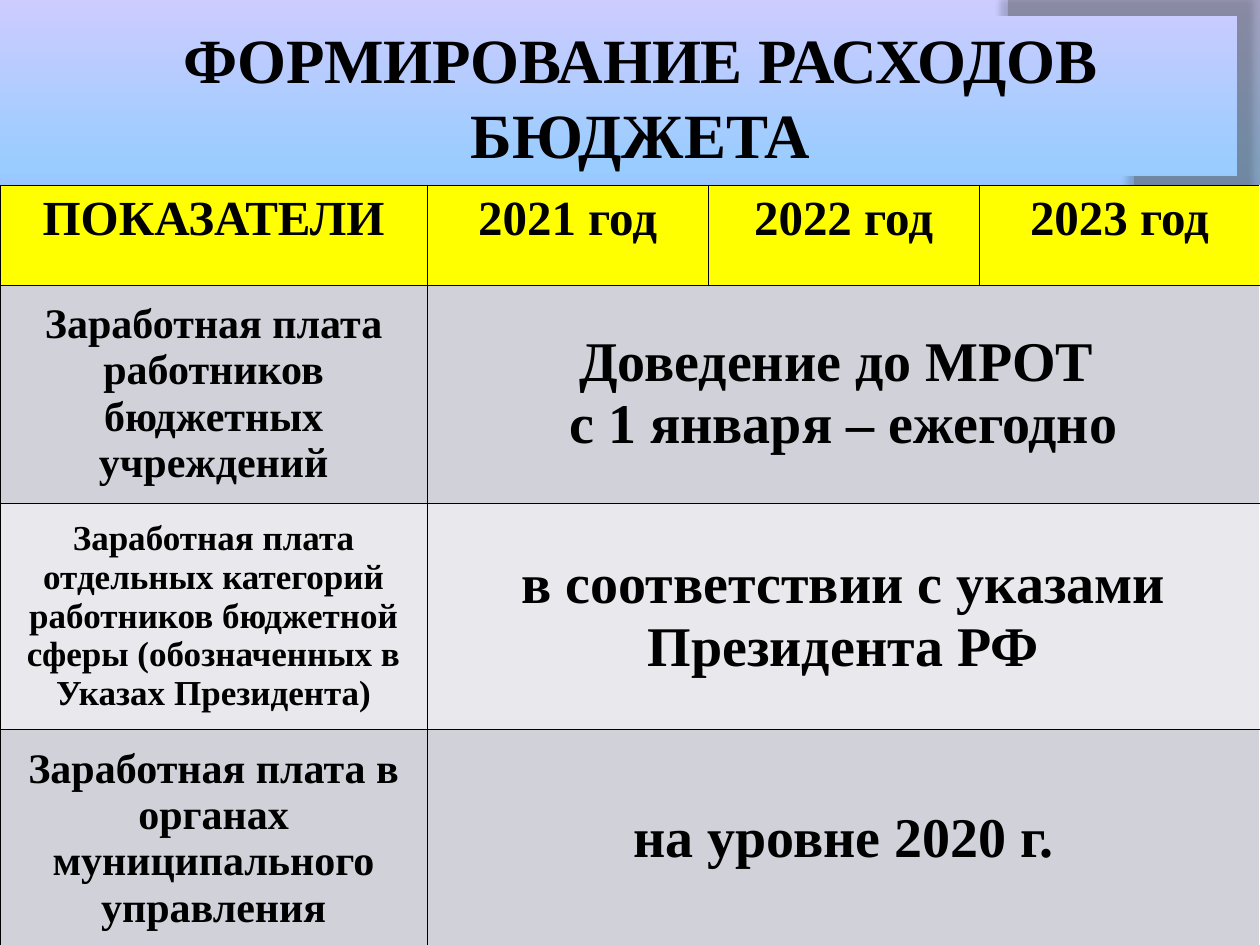
import pptx
import pptx.dml.color
import pptx.enum.text
import pptx.oxml
import pptx.oxml.ns
import pptx.util
from pptx.util import Inches

FONT = "Times New Roman"
BLACK = "000000"
WHITE = "FFFFFF"
YELLOW = "FFFF00"
BAND_DARK = "D1D1DA"
BAND_LIGHT = "E9E9ED"
SKY_STOPS = [(0, "CCCCFF"), (18, "99CCFF"), (36, "9966FF"),
             (61, "CC99FF"), (82, "99CCFF"), (100, "CCCCFF")]
YEARS = ["2021 год", "2022 год", "2023 год"]
INDICATORS = [
    ("Заработная плата работников бюджетных учреждений", 24,
     ["Доведение до МРОТ ", "с 1 января – ежегодно"]),
    ("Заработная плата отдельных категорий работников бюджетной сферы "
     "(обозначенных в Указах Президента)", 20,
     ["в соответствии с указами Президента РФ"]),
    ("Заработная плата в органах муниципального управления", 24,
     ["на уровне 2020 г."]),
]


def rgb(hex_colour):
    return pptx.dml.color.RGBColor.from_string(hex_colour)


def xml(markup):
    head, rest = markup.split(">", 1)
    slash = "/" if head.endswith("/") else ""
    return pptx.oxml.parse_xml(
        f"{head.rstrip('/')} {pptx.oxml.ns.nsdecls('a')}{slash}>{rest}")


def write(frame, lines, size):
    for index, line in enumerate(lines):
        paragraph = frame.paragraphs[0] if index == 0 else frame.add_paragraph()
        paragraph.alignment = pptx.enum.text.PP_ALIGN.CENTER
        run = paragraph.add_run()
        run.text = line
        run.font.name = FONT
        run.font.size = pptx.util.Pt(size)
        run.font.bold = True
        run.font.color.rgb = rgb(BLACK)


def paint_sky(slide):
    fill = slide.background.fill
    fill.gradient()
    fill.gradient_angle = 270
    stops = slide.element.find(".//" + pptx.oxml.ns.qn("a:gsLst"))
    for stop in list(stops):
        stops.remove(stop)
    for position, colour in SKY_STOPS:
        stops.append(xml(f'<a:gs pos="{position * 1000}">'
                         f'<a:srgbClr val="{colour}"/></a:gs>'))


def bezier(start, first, second, end, steps=40):
    for step in range(1, steps + 1):
        t = step / steps
        weights = ((1 - t) ** 3, 3 * t * (1 - t) ** 2, 3 * t ** 2 * (1 - t), t ** 3)
        yield tuple(sum(w * point[axis] for w, point
                        in zip(weights, (start, first, second, end)))
                    for axis in (0, 1))


def add_wing(slide, left, top, width, height):
    right, bottom = left + width, top + height
    foot = (left + 0.21, bottom)
    curve = bezier(foot, (left + 1.35, top + 6.19), (left + 2.18, top + 3), (left, top))
    builder = slide.shapes.build_freeform(right, top + 0.02, scale=Inches(1))
    builder.add_line_segments([(right, bottom), foot, *curve], close=True)
    wing = builder.convert_to_shape()
    wing.fill.solid()
    wing.fill.fore_color.rgb = rgb("5E5E5E")
    wing.line.fill.background()
    properties = wing.element.spPr
    colour = properties.find(".//" + pptx.oxml.ns.qn("a:srgbClr"))
    colour.append(xml('<a:alpha val="40000"/>'))
    properties.append(xml(
        f'<a:effectLst><a:outerShdw blurRad="{pptx.util.Pt(4)}" '
        f'dist="{pptx.util.Pt(4)}" dir="10800000" algn="ctr" rotWithShape="0">'
        f'<a:srgbClr val="{BLACK}"><a:alpha val="45000"/></a:srgbClr>'
        '</a:outerShdw></a:effectLst>'))
    slide.shapes.title.element.addprevious(wing.element)


def place_title(slide, left, top, width, height):
    title = slide.shapes.title
    title.left, title.top = Inches(left), Inches(top)
    title.width, title.height = Inches(width), Inches(height)
    title.element.set("useBgFill", "1")
    frame = title.text_frame
    frame.word_wrap = True
    frame.auto_size = pptx.enum.text.MSO_AUTO_SIZE.NONE
    frame.vertical_anchor = pptx.enum.text.MSO_ANCHOR.MIDDLE
    frame.margin_left = frame.margin_right = Inches(0.05)
    frame.margin_top = frame.margin_bottom = Inches(0.05)
    write(frame, ["ФОРМИРОВАНИЕ РАСХОДОВ БЮДЖЕТА"], 36)


def style_cell(cell, background, last_column, last_row):
    properties = cell._tc.get_or_add_tcPr()
    for side, outer in (("L", False), ("R", last_column), ("T", False), ("B", last_row)):
        colour, weight = (WHITE, 1) if outer else (BLACK, 0.25)
        properties.append(xml(
            f'<a:ln{side} w="{pptx.util.Pt(weight)}"><a:solidFill>'
            f'<a:srgbClr val="{colour}"/></a:solidFill></a:ln{side}>'))
    cell.fill.solid()
    cell.fill.fore_color.rgb = rgb(background)


def add_indicators(slide, left, top, width, height):
    column_widths = [3.39, 2.23, 2.15, 2.23]
    row_heights = [0.79, 1.73, 1.8, 1.73]
    table = slide.shapes.add_table(
        len(row_heights), len(column_widths),
        Inches(left), Inches(top), Inches(width), Inches(height)).table
    for column, column_width in zip(table.columns, column_widths):
        column.width = Inches(column_width)
    for row, row_height in zip(table.rows, row_heights):
        row.height = Inches(row_height)

    for column, heading in enumerate(["ПОКАЗАТЕЛИ", *YEARS]):
        cell = table.cell(0, column)
        style_cell(cell, YELLOW, column == len(YEARS), False)
        write(cell.text_frame, [heading], 28)

    for row, (indicator, size, plan) in enumerate(INDICATORS, start=1):
        band = BAND_DARK if row % 2 else BAND_LIGHT
        table.cell(row, 1).merge(table.cell(row, len(YEARS)))
        for column in range(len(column_widths)):
            style_cell(table.cell(row, column), band, column > 0, row == len(INDICATORS))
        for column, lines, text_size in ((0, [indicator], size), (1, plan, 32)):
            cell = table.cell(row, column)
            cell.vertical_anchor = pptx.enum.text.MSO_ANCHOR.MIDDLE
            write(cell.text_frame, lines, text_size)


def main():
    presentation = pptx.Presentation()
    presentation.slide_width = Inches(10)
    presentation.slide_height = Inches(7.5)
    slide = presentation.slides.add_slide(presentation.slide_layouts[5])
    paint_sky(slide)
    add_wing(slide, 8, 0, 2, 7.5)
    place_title(slide, 0.35, 0.13, 9.47, 1.26)
    add_indicators(slide, 0, 1.47, 10, 6.05)
    presentation.save("out.pptx")


if __name__ == "__main__":
    main()
